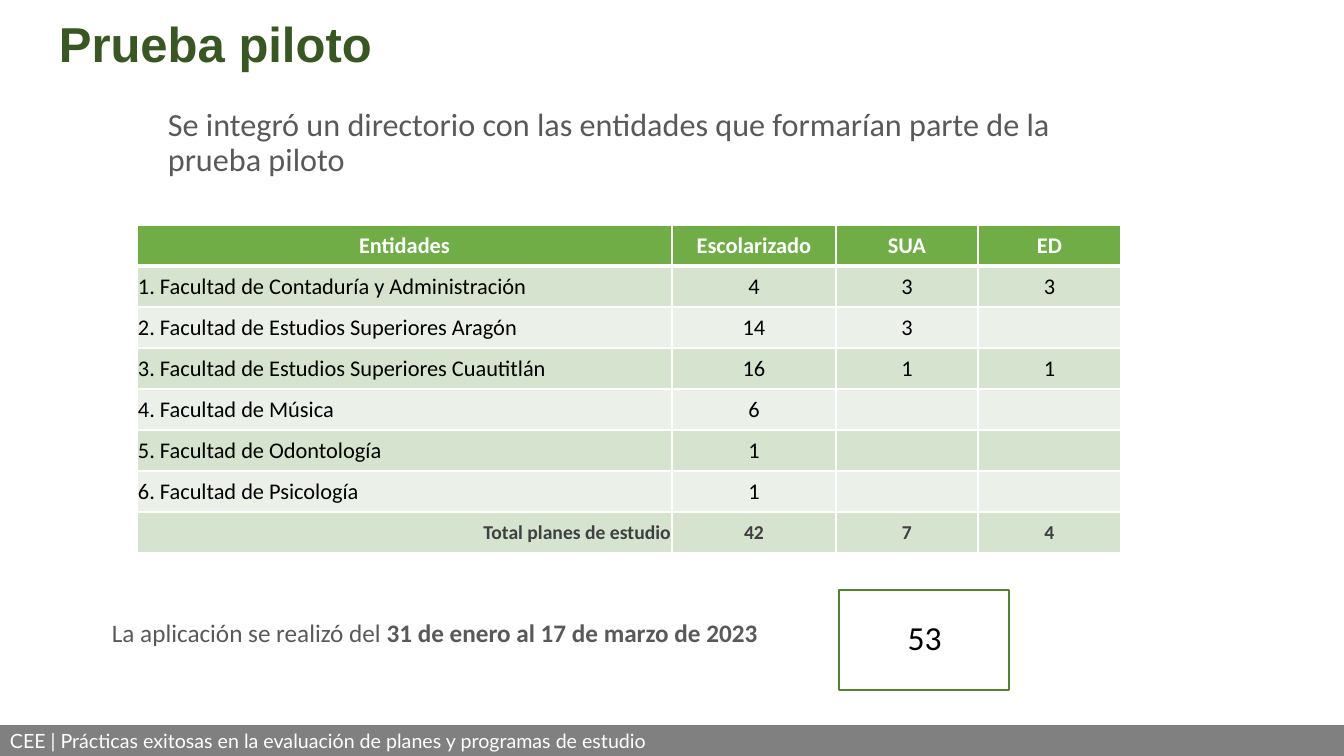
from dataclasses import dataclass

from lxml.etree import SubElement
from pptx import Presentation
from pptx.dml.color import RGBColor
from pptx.enum.shapes import MSO_SHAPE
from pptx.enum.text import MSO_ANCHOR, PP_ALIGN
from pptx.oxml.ns import qn
from pptx.util import Emu, Pt

SCALE = 12192000 / 1344
WHITE, GREEN, GREY = "FFFFFF", "70AD47", "595959"
BANDS = ("D5E3CF", "EBF1E9")
WIDTHS = (535, 164, 142, 143)
ROW = 41
ROWS = (
    ("Entidades", "Escolarizado", "SUA", "ED"),
    ("1. Facultad de Contaduría y Administración", "4", "3", "3"),
    ("2. Facultad de Estudios Superiores Aragón", "14", "3", ""),
    ("3. Facultad de Estudios Superiores Cuautitlán", "16", "1", "1"),
    ("4. Facultad de Música", "6", "", ""),
    ("5. Facultad de Odontología", "1", "", ""),
    ("6. Facultad de Psicología", "1", "", ""),
    ("Total planes de estudio", "42", "7", "4"),
)


@dataclass
class Run:
    text: str
    size: int
    color: str
    bold: bool = False
    font: str = "Calibri"


@dataclass
class Box:
    left: int
    top: int
    width: int
    height: int
    runs: tuple[Run, ...] = ()
    align: PP_ALIGN = PP_ALIGN.LEFT
    anchor: MSO_ANCHOR = MSO_ANCHOR.TOP
    space: float = 1.0
    fill: str = ""
    line: str = ""


BOXES = (
    Box(49, 20, 464, 58, (Run("Prueba piloto", 35, "385723", True, "Arial"),),
        anchor=MSO_ANCHOR.BOTTOM, space=0.9),
    Box(158, 104, 983, 97,
        (Run("Se integró un directorio con las entidades que formarían parte de la prueba piloto", 23, GREY),),
        space=0.9),
    Box(0, 725, 1344, 31,
        (Run("CEE | Prácticas exitosas en la evaluación de planes y programas de estudio", 14, WHITE, font="Lato"),),
        align=PP_ALIGN.JUSTIFY, anchor=MSO_ANCHOR.MIDDLE, fill="808080"),
    Box(839, 590, 170, 100, fill=WHITE, line="548235"),
    Box(855, 612, 139, 50, (Run("53", 24, "000000"),), align=PP_ALIGN.CENTER),
    Box(102, 612, 673, 40,
        (Run("La aplicación se realizó del ", 18, GREY),
         Run("31 de enero al 17 de marzo de 2023", 18, GREY, True))),
)


def px(value: int) -> Emu:
    """Turn pixels into EMU."""
    return Emu(round(value * SCALE))


def tint(code: str) -> RGBColor:
    """Turn a hex string into a colour."""
    return RGBColor.from_string(code)


def write(para, runs: tuple[Run, ...], align: PP_ALIGN) -> None:
    """Add styled runs to a paragraph."""
    para.alignment = align
    for item in runs:
        run = para.add_run()
        run.text = item.text
        run.font.size = Pt(item.size)
        run.font.name = item.font
        run.font.bold = item.bold
        run.font.color.rgb = tint(item.color)


def draw(slide, box: Box) -> None:
    """Draw a text box or a filled rectangle."""
    place = [px(v) for v in (box.left, box.top, box.width, box.height)]
    if box.fill:
        shape = slide.shapes.add_shape(MSO_SHAPE.RECTANGLE, *place)
        shape.shadow.inherit = False
        shape.fill.solid()
        shape.fill.fore_color.rgb = tint(box.fill)
        if box.line:
            shape.line.color.rgb = tint(box.line)
            shape.line.width = Pt(1)
        else:
            shape.line.fill.background()
    else:
        shape = slide.shapes.add_textbox(*place)
    if box.runs:
        frame = shape.text_frame
        frame.word_wrap = True
        frame.vertical_anchor = box.anchor
        para = frame.paragraphs[0]
        para.line_spacing = box.space
        write(para, box.runs, box.align)


def edge(cell, head: bool, below: bool) -> None:
    """Give a cell white borders, thick under the header."""
    props = cell._tc.get_or_add_tcPr()
    for tag in ("a:lnL", "a:lnR", "a:lnT", "a:lnB"):
        thick = (head and tag == "a:lnB") or (below and tag == "a:lnT")
        line = SubElement(props, qn(tag), w=str(Pt(3 if thick else 1)))
        fill = SubElement(line, qn("a:solidFill"))
        SubElement(fill, qn("a:srgbClr"), val=WHITE)


def grid(slide) -> None:
    """Draw the table of entities."""
    table = slide.shapes.add_table(
        len(ROWS), len(WIDTHS), px(137), px(225), px(sum(WIDTHS)), px(ROW * len(ROWS))).table
    for col, width in zip(table.columns, WIDTHS):
        col.width = px(width)
    for i, row in enumerate(ROWS):
        head, total = i == 0, i == len(ROWS) - 1
        table.rows[i].height = px(ROW)
        color = WHITE if head else "404040" if total else "000000"
        for j, text in enumerate(row):
            cell = table.cell(i, j)
            cell.vertical_anchor = MSO_ANCHOR.MIDDLE
            align = PP_ALIGN.CENTER
            if j == 0 and not head:
                cell.margin_left = cell.margin_right = cell.margin_top = px(1)
                cell.margin_bottom = 0
                align = PP_ALIGN.RIGHT if total else PP_ALIGN.LEFT
            edge(cell, head, i == 1)
            cell.fill.solid()
            cell.fill.fore_color.rgb = tint(GREEN if head else BANDS[(i - 1) % 2])
            if text:
                run = Run(text, 14 if total else 16, color, head or total)
                write(cell.text_frame.paragraphs[0], (run,), align)


def main() -> None:
    """Build and save the slide."""
    deck = Presentation()
    deck.slide_width, deck.slide_height = px(1344), px(756)
    slide = deck.slides.add_slide(deck.slide_layouts[6])
    for box in BOXES[:3]:
        draw(slide, box)
    grid(slide)
    for box in BOXES[3:]:
        draw(slide, box)
    deck.save("out.pptx")


if __name__ == "__main__":
    main()
